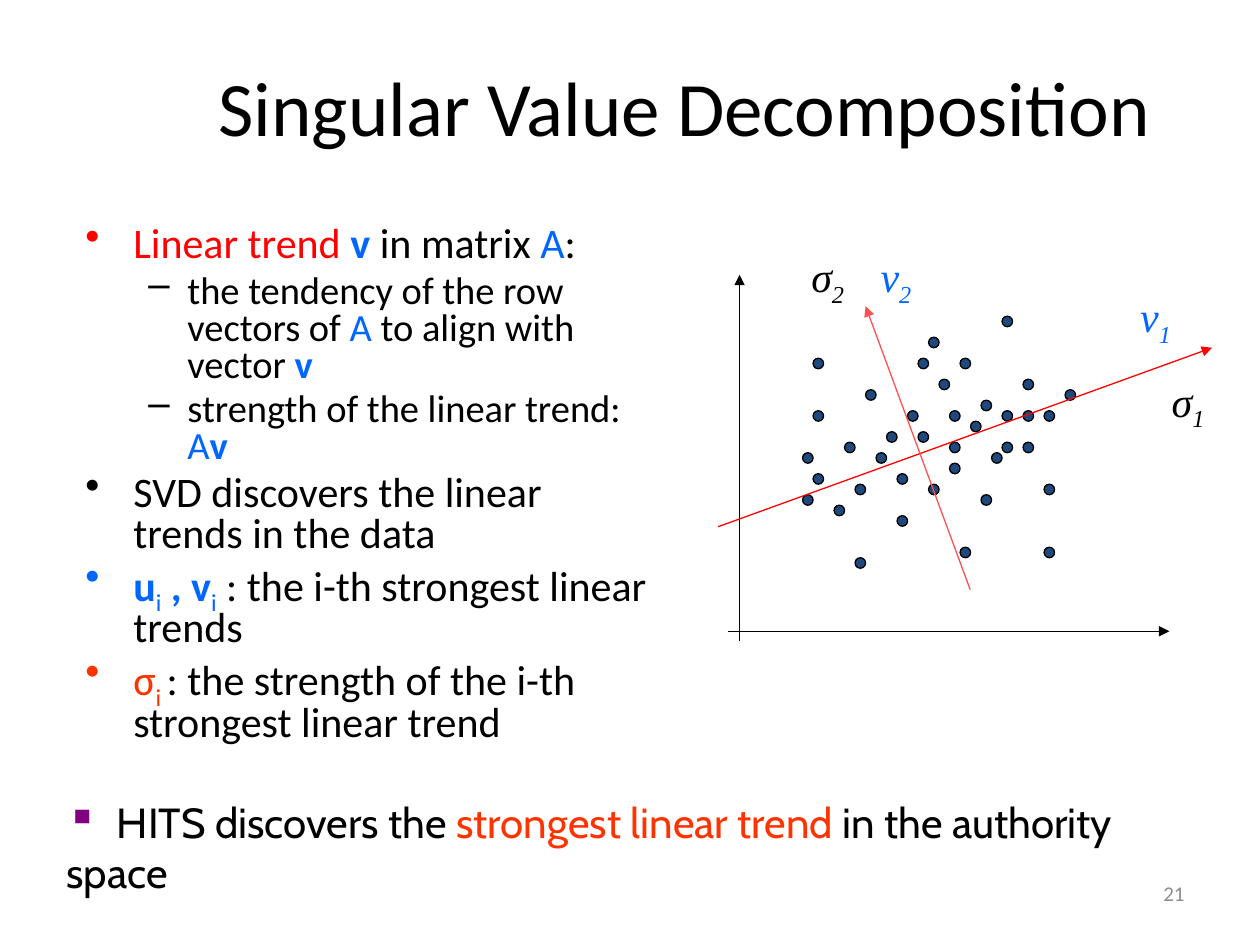
from lxml.etree import SubElement
from pptx import Presentation
from pptx.dml.color import RGBColor
from pptx.enum.shapes import MSO_CONNECTOR, MSO_SHAPE
from pptx.enum.text import MSO_ANCHOR as ANCHOR, PP_ALIGN as ALIGN
from pptx.oxml.ns import qn
from pptx.util import Inches, Pt

COLOURS = {
    "black": "000000", "grey": "8C8C8C", "navy": "1F497D", "blue": "0066FF",
    "red": "FF0000", "coral": "FF5050", "orange": "FF3300", "purple": "800080",
}
RGB = {name: RGBColor.from_string(value) for name, value in COLOURS.items()}

deck = Presentation()
deck.slide_width, deck.slide_height = Inches(10), Inches(7.5)
slide = deck.slides.add_slide(deck.slide_layouts[6])


def add_text_frame(left, top, width, height, wrap=True, anchor=ANCHOR.TOP):
    box = slide.shapes.add_textbox(Inches(left), Inches(top), Inches(width), Inches(height))
    box.text_frame.word_wrap = wrap
    box.text_frame.vertical_anchor = anchor
    return box.text_frame


def write(paragraph, runs, size, font="Calibri", bullet=None, bullet_colour=None,
          margin=0, hanging=0):
    """Each run is (text, colour, style); style letters: b bold, i italic, s subscript."""
    for text, colour, style in runs:
        run = paragraph.add_run()
        run.text = text
        run.font.name, run.font.size = font, Pt(size)
        run.font.color.rgb = RGB[colour]
        run.font.bold, run.font.italic = "b" in style, "i" in style
        if "s" in style:
            run._r.get_or_add_rPr().set("baseline", "-25000")
    if bullet:
        properties = paragraph._p.get_or_add_pPr()
        properties.set("marL", str(Inches(margin)))
        properties.set("indent", str(-Inches(hanging)))
        if bullet_colour:
            fill = SubElement(properties, qn("a:buClr"))
            SubElement(fill, qn("a:srgbClr")).set("val", COLOURS[bullet_colour])
        SubElement(properties, qn("a:buChar")).set("char", bullet)


# Slide number and title
number = add_text_frame(7.17, 6.83, 2.33, 0.52, anchor=ANCHOR.MIDDLE).paragraphs[0]
number.alignment = ALIGN.RIGHT
write(number, [("21", "grey", "")], 12)

title = add_text_frame(1.22, 0.36, 8.43, 0.95, anchor=ANCHOR.MIDDLE).paragraphs[0]
title.alignment = ALIGN.CENTER
write(title, [("Singular Value Decomposition", "black", "")], 44)

# Bullet list: (level, runs)
points = [
    (0, [("Linear trend ", "red", ""), ("v ", "blue", "b"), ("in matrix ", "black", ""),
         ("A", "blue", ""), (":", "black", "")]),
    (1, [("the tendency of the row vectors of ", "black", ""), ("A", "blue", ""),
         (" to align with vector ", "black", ""), ("v", "blue", "b")]),
    (1, [("strength of the linear trend: ", "black", ""), ("A", "blue", ""),
         ("v", "blue", "b")]),
    (0, [("SVD discovers the linear trends in the data", "black", "")]),
    (0, [("u", "blue", "b"), ("i", "blue", "s"), (" , v", "blue", "b"), ("i", "blue", "s"),
         (" : the i-th strongest linear trends", "black", "")]),
    (0, [("σ", "orange", ""), ("i ", "orange", "s"),
         (": the strength of the i-th strongest linear trend", "black", "")]),
]
levels = [
    {"size": 24, "bullet": "•", "margin": 0.38, "hanging": 0.38},
    {"size": 22, "bullet": "–", "margin": 0.81, "hanging": 0.31},
]
body = add_text_frame(0.58, 1.75, 4.74, 4.34)
for index, (level, runs) in enumerate(points):
    point = body.add_paragraph() if index else body.paragraphs[0]
    point.level = level
    point.line_spacing = 0.8
    point.space_before = Pt(0.2 * levels[level]["size"])
    write(point, runs, **levels[level])

# Scatter points on a grid of twelfths of an inch: row -> columns
STEP = 1 / 12
scatter = {
    0: [19], 2: [12], 4: [1, 11, 15], 6: [13, 21], 7: [6, 25], 8: [17],
    9: [1, 10, 14, 19, 21, 23], 10: [16], 11: [8, 11], 12: [4, 14, 19, 21],
    13: [0, 7, 18], 14: [14], 15: [1, 9], 16: [5, 12, 23], 17: [0, 17],
    18: [3], 19: [9], 22: [15, 23], 23: [5],
}
for row, columns in scatter.items():
    for column in columns:
        dot = slide.shapes.add_shape(
            MSO_SHAPE.OVAL, Inches(6.37 + column * STEP), Inches(2.51 + row * STEP),
            Inches(STEP), Inches(STEP))
        dot.shadow.inherit = False
        dot.fill.solid()
        dot.fill.fore_color.rgb = RGB["navy"]
        dot.line.color.rgb = RGB["black"]
        dot.line.width = Pt(0.75)

# Axes and trend vectors, each with its arrowhead at the end
arrows = [
    (5.87, 5.09, 5.87, 2.18, "black"),
    (5.78, 5.01, 9.28, 5.01, "black"),
    (5.7, 4.18, 9.62, 2.76, "red"),
    (7.7, 4.68, 6.87, 2.43, "coral"),
]
for *ends, colour in arrows:
    arrow = slide.shapes.add_connector(MSO_CONNECTOR.STRAIGHT, *map(Inches, ends))
    arrow.line.color.rgb = RGB[colour]
    arrow.line.width = Pt(0.75)
    SubElement(arrow.line._get_or_add_ln(), qn("a:tailEnd")).set("type", "triangle")
    SubElement(arrow._element.spPr, qn("a:effectLst"))

# Vector and singular value labels
labels = [
    (9.2, 2.93, "σ", "1", "black"),
    (6.34, 1.94, "σ", "2", "black"),
    (8.95, 2.26, "v", "1", "blue"),
    (6.89, 1.94, "v", "2", "blue"),
]
for left, top, symbol, subscript, colour in labels:
    label = add_text_frame(left, top, 0.48, 0.5, wrap=False).paragraphs[0]
    label.space_before = Pt(4.8)
    write(label, [(symbol, colour, "i"), (subscript, colour, "is")], 24, "Times New Roman")

# Conclusion
conclusion = add_text_frame(0.43, 6.27, 8.68, 0.9).paragraphs[0]
write(conclusion, [("  HITS discovers the ", "black", ""),
                   ("strongest linear trend", "orange", ""),
                   (" in the authority space", "black", "")],
      24, "Cabin", bullet="▪", bullet_colour="purple")

deck.save("out.pptx")
